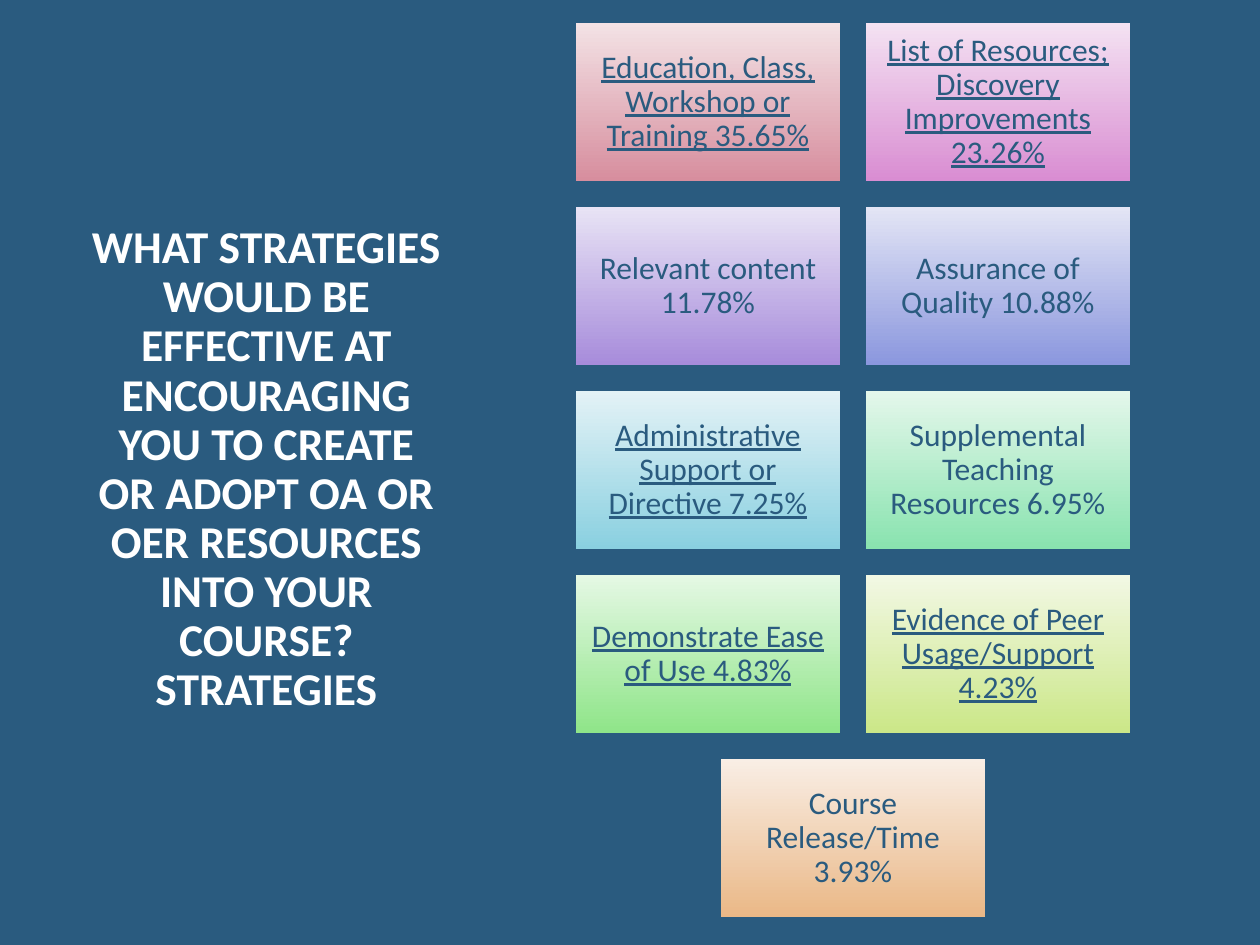
from dataclasses import dataclass

from pptx import Presentation
from pptx.dml.color import RGBColor
from pptx.enum.shapes import MSO_SHAPE
from pptx.enum.text import MSO_ANCHOR, PP_ALIGN
from pptx.slide import Slide
from pptx.text.text import TextFrame
from pptx.util import Emu, Pt

RECTANGLE = MSO_SHAPE.RECTANGLE
MIDDLE = MSO_ANCHOR.MIDDLE
CENTER = PP_ALIGN.CENTER

EMU_PER_PX = 914400 / 126
FONT = "Calibri"
COLORS = {"background": "2A5B7F", "title": "FFFFFF", "card_text": "2A5B7F"}

COLUMNS = 2
GRID_LEFT, GRID_TOP = 576, 23
CARD_WIDTH, CARD_HEIGHT = 264, 158
COLUMN_STEP, ROW_STEP = 290, 184
CARD_INSET = 9

TITLE = (
    "WHAT STRATEGIES WOULD BE EFFECTIVE AT ENCOURAGING YOU TO CREATE "
    "OR ADOPT OA OR OER RESOURCES INTO YOUR COURSE?\vSTRATEGIES"
)


@dataclass
class Strategy:
    text: str
    top_color: str
    bottom_color: str
    underlined: bool = False


STRATEGIES = [
    Strategy("Education, Class, Workshop or Training 35.65%", "F3E2E5", "D78E9E", True),
    Strategy("List of Resources; Discovery Improvements 23.26%", "F4E2F2", "D98DD2", True),
    Strategy("Relevant content 11.78%", "E8E3F5", "A78CDB"),
    Strategy("Assurance of Quality 10.88%", "E3E5F5", "8B97DE"),
    Strategy("Administrative Support or Directive 7.25%", "E3F2F6", "8AD0E0", True),
    Strategy("Supplemental Teaching Resources 6.95%", "E4F7EB", "89E3AF"),
    Strategy("Demonstrate Ease of Use 4.83%", "E5F8E4", "8FE589", True),
    Strategy("Evidence of Peer Usage/Support 4.23%", "F2F8E4", "CBE788", True),
    Strategy("Course Release/Time 3.93%", "F9EEE5", "EAB887"),
]


def px(length: int) -> Emu:
    return Emu(round(length * EMU_PER_PX))


def write_text(text_frame: TextFrame, text: str, size: int, color: str,
               bold: bool = False, underlined: bool = False) -> None:
    text_frame.text = text
    text_frame.word_wrap = True
    text_frame.vertical_anchor = MIDDLE
    paragraph = text_frame.paragraphs[0]
    paragraph.alignment = CENTER
    paragraph.line_spacing = 0.9
    for run in paragraph.runs:
        run.font.name = FONT
        run.font.size = Pt(size)
        run.font.bold = bold
        run.font.underline = underlined
        run.font.color.rgb = RGBColor.from_string(color)


def add_title(slide: Slide) -> None:
    shape = slide.shapes.add_textbox(px(78), px(84), px(377), px(772))
    write_text(shape.text_frame, TITLE, 26, COLORS["title"], bold=True)


def add_card(slide: Slide, strategy: Strategy, left: int, top: int) -> None:
    shape = slide.shapes.add_shape(
        RECTANGLE, px(left), px(top), px(CARD_WIDTH), px(CARD_HEIGHT))
    shape.shadow.inherit = False
    shape.line.fill.background()
    shape.fill.gradient()
    shape.fill.gradient_angle = 270
    colors = (strategy.top_color, strategy.bottom_color)
    for position, (stop, color) in enumerate(zip(shape.fill.gradient_stops, colors)):
        stop.position = position
        stop.color.rgb = RGBColor.from_string(color)
    text_frame = shape.text_frame
    text_frame.margin_left = text_frame.margin_right = px(CARD_INSET)
    text_frame.margin_top = text_frame.margin_bottom = px(CARD_INSET)
    write_text(text_frame, strategy.text, 18, COLORS["card_text"],
               underlined=strategy.underlined)


def add_cards(slide: Slide) -> None:
    for index, strategy in enumerate(STRATEGIES):
        row, column = divmod(index, COLUMNS)
        cards_in_row = min(COLUMNS, len(STRATEGIES) - row * COLUMNS)
        indent = (COLUMNS - cards_in_row) * COLUMN_STEP // 2
        add_card(slide, strategy,
                 GRID_LEFT + indent + column * COLUMN_STEP,
                 GRID_TOP + row * ROW_STEP)


def main() -> None:
    presentation = Presentation()
    presentation.slide_width = px(1260)
    presentation.slide_height = px(945)
    slide = presentation.slides.add_slide(presentation.slide_layouts[6])
    slide.background.fill.solid()
    slide.background.fill.fore_color.rgb = RGBColor.from_string(COLORS["background"])
    add_title(slide)
    add_cards(slide)
    presentation.save("out.pptx")


if __name__ == "__main__":
    main()
